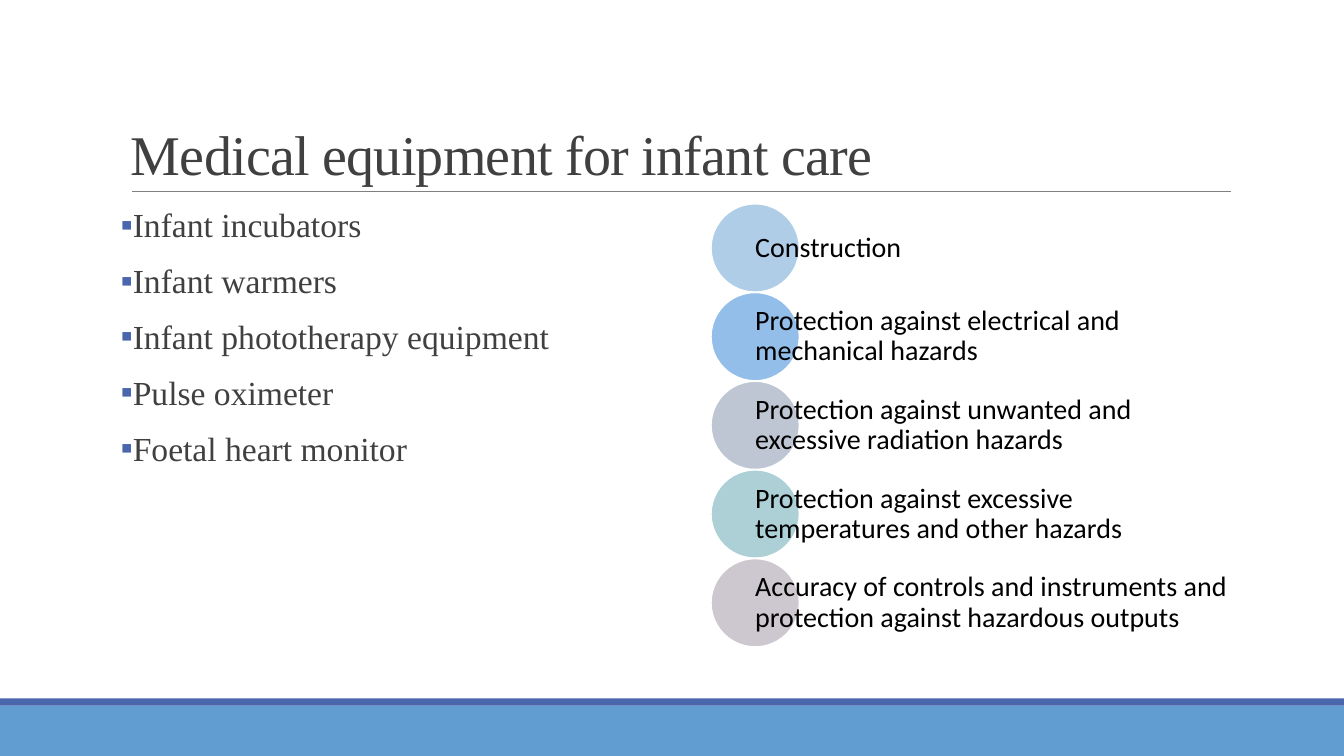
"""Build the slide on medical equipment for infant care."""
from dataclasses import dataclass

import pptx
import pptx.dml.color
import pptx.enum.shapes
import pptx.enum.text
import pptx.oxml.ns
import pptx.oxml.xmlchemy
import pptx.shapes.autoshape
import pptx.slide
import pptx.text.text
import pptx.util
from lxml import etree
from pptx.util import Inches

SERIF = "Times New Roman"
GREY = "404040"
BLUE = "629DD1"
INDIGO = "4A66AC"
CIRCLE_SIZE = 0.88
CIRCLE_LEFT = 7.05
CIRCLE_TOP = 2.02
EQUIPMENT = [
    "Infant incubators",
    "Infant warmers",
    "Infant phototherapy equipment",
    "Pulse oximeter",
    "Foetal heart monitor",
]


@dataclass
class Requirement:
    color: str
    text: str


@dataclass
class Area:
    left: float
    top: float
    width: float
    height: float

    def lengths(self) -> tuple:
        return tuple(map(Inches, (self.left, self.top, self.width, self.height)))


REQUIREMENTS = [
    Requirement(BLUE, "Construction"),
    Requirement("297FD5", "Protection against electrical and mechanical hazards"),
    Requirement("7F8FA9", "Protection against unwanted and excessive radiation hazards"),
    Requirement("5AA2AE", "Protection against excessive temperatures and other hazards"),
    Requirement("9D90A0", "Accuracy of controls and instruments and protection against hazardous outputs"),
]


def rgb(value: str) -> pptx.dml.color.RGBColor:
    return pptx.dml.color.RGBColor.from_string(value)


def add_child(parent: etree.ElementBase, tag: str, **attributes: str) -> etree.ElementBase:
    return etree.SubElement(parent, pptx.oxml.ns.qn(tag), attributes)


def add_filled(page: pptx.slide.Slide, kind: int, area: Area, color: str) -> pptx.shapes.autoshape.Shape:
    shape = page.shapes.add_shape(kind, *area.lengths())
    shape.shadow.inherit = False
    shape.fill.solid()
    shape.fill.fore_color.rgb = rgb(color)
    shape.line.fill.background()
    return shape


def add_text_frame(page: pptx.slide.Slide, area: Area, anchor: int, side: float, edge: float) -> pptx.text.text.TextFrame:
    frame = page.shapes.add_textbox(*area.lengths()).text_frame
    frame.word_wrap = True
    frame.vertical_anchor = anchor
    frame.margin_left = frame.margin_right = Inches(side)
    frame.margin_top = frame.margin_bottom = Inches(edge)
    return frame


def style(para: pptx.text.text._Paragraph, face: str, size: float, color: str, spacing: float) -> None:
    para.line_spacing = spacing
    para.font.name = face
    para.font.size = pptx.util.Pt(size)
    para.font.color.rgb = rgb(color)


def add_bullet(para: pptx.text.text._Paragraph) -> None:
    properties = para._p.get_or_add_pPr()
    properties.set("marL", str(Inches(0.1)))
    properties.set("indent", str(Inches(-0.1)))
    add_child(add_child(properties, "a:buClr"), "a:srgbClr", val=INDIGO)
    add_child(properties, "a:buFont", typeface="Calibri")
    add_child(properties, "a:buChar", char="▪")


def add_frame_lines(page: pptx.slide.Slide) -> None:
    rectangle = pptx.enum.shapes.MSO_SHAPE.RECTANGLE
    add_filled(page, rectangle, Area(0, 7, 13.33, 0.5), BLUE)
    add_filled(page, rectangle, Area(0, 6.93, 13.33, 0.07), INDIGO)
    rule = page.shapes.add_connector(
        pptx.enum.shapes.MSO_CONNECTOR.STRAIGHT, Inches(1.31), Inches(1.9), Inches(12.21), Inches(1.9)
    )
    rule.line.color.rgb = rgb("808080")
    rule.line.width = pptx.util.Pt(0.5)
    add_child(rule._element.spPr, "a:effectLst")


def add_title(page: pptx.slide.Slide) -> None:
    frame = add_text_frame(page, Area(1.2, 0.31, 11, 1.59), pptx.enum.text.MSO_ANCHOR.BOTTOM, 0.1, 0.05)
    para = frame.paragraphs[0]
    para.text = "Medical equipment for infant care"
    style(para, SERIF, 40, GREY, 0.85)
    para.runs[0]._r.get_or_add_rPr().set("spc", "-50")


def add_equipment(page: pptx.slide.Slide) -> None:
    frame = add_text_frame(page, Area(1.2, CIRCLE_TOP, 5.4, 4.4), pptx.enum.text.MSO_ANCHOR.TOP, 0, 0.05)
    frame.text = "\n".join(EQUIPMENT)
    for para in frame.paragraphs:
        add_bullet(para)
        style(para, SERIF, 24, GREY, 0.9)
        para.space_before = pptx.util.Pt(12)
        para.space_after = pptx.util.Pt(2)


def add_requirement(page: pptx.slide.Slide, requirement: Requirement, top: float) -> None:
    circle = add_filled(
        page,
        pptx.enum.shapes.MSO_SHAPE.OVAL,
        Area(CIRCLE_LEFT, top, CIRCLE_SIZE, CIRCLE_SIZE),
        requirement.color,
    )
    fill_color = circle._element.spPr.find(".//" + pptx.oxml.ns.qn("a:srgbClr"))
    add_child(fill_color, "a:alpha", val="50000")
    circle.line.color.rgb = rgb("FFFFFF")
    circle.line.width = pptx.util.Pt(1.25)
    area = Area(CIRCLE_LEFT + CIRCLE_SIZE / 2, top, 4.69, CIRCLE_SIZE)
    para = add_text_frame(page, area, pptx.enum.text.MSO_ANCHOR.MIDDLE, 0, 0.03).paragraphs[0]
    para.text = requirement.text
    style(para, "Calibri", 20, "000000", 0.9)


def main() -> None:
    deck = pptx.Presentation()
    deck.slide_width, deck.slide_height = Inches(13.33), Inches(7.5)
    page = deck.slides.add_slide(deck.slide_layouts[6])
    add_frame_lines(page)
    add_title(page)
    add_equipment(page)
    for index, requirement in enumerate(REQUIREMENTS):
        add_requirement(page, requirement, CIRCLE_TOP + index * CIRCLE_SIZE)
    deck.save("out.pptx")


if __name__ == "__main__":
    main()
